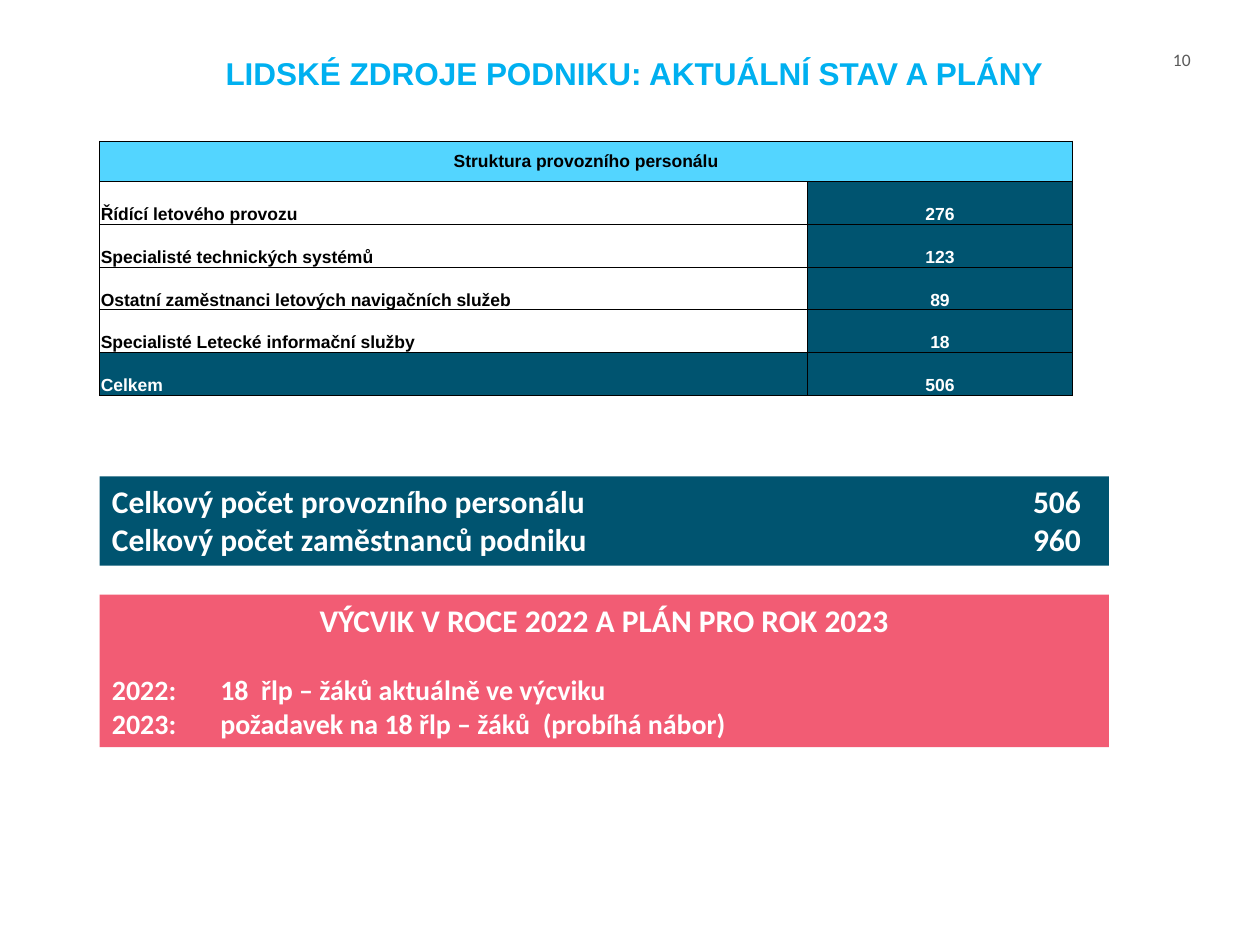
"""Build a slide on staff numbers and training plans."""
from lxml.etree import SubElement as Sub
from pptx import Presentation
from pptx.dml.color import RGBColor
from pptx.enum.shapes import MSO_SHAPE as Shape
from pptx.enum.text import MSO_ANCHOR as Anchor, PP_ALIGN as Align
from pptx.oxml.ns import qn
from pptx.util import Inches, Pt

BLACK = RGBColor(0x00, 0x00, 0x00)
WHITE = RGBColor(0xFF, 0xFF, 0xFF)
GREY = RGBColor(0x5A, 0x5A, 0x5A)
BLUE = RGBColor(0x00, 0xB0, 0xF0)
SKY = RGBColor(0x53, 0xD5, 0xFF)
TEAL = RGBColor(0x00, 0x54, 0x70)
PINK = RGBColor(0xF2, 0x5C, 0x74)

LEFT = 0.79
STAFF = [
    ("Řídící letového provozu", "276"),
    ("Specialisté technických systémů", "123"),
    ("Ostatní zaměstnanci letových navigačních služeb", "89"),
    ("Specialisté Letecké informační služby", "18"),
    ("Celkem", "506"),
]
TOTALS = [
    "Celkový počet provozního personálu\t506",
    "Celkový počet zaměstnanců podniku\t960",
]
HEAD = "VÝCVIK V ROCE 2022 A PLÁN PRO ROK 2023"
PLANS = [
    "2022:\t18  řlp – žáků aktuálně ve výcviku",
    "2023:\tpožadavek na 18 řlp – žáků  (probíhá nábor)",
]


def style(para, size, color, face="Calibri", bold=True, align=Align.LEFT):
    para.alignment = align
    for run in para.runs:
        font = run.font
        font.name, font.size, font.bold = face, Pt(size), bold
        font.color.rgb = color


def add_tab(para, pos, kind):
    tabs = Sub(para._p.get_or_add_pPr(), qn("a:tabLst"))
    Sub(tabs, qn("a:tab"), pos=str(Inches(pos)), algn=kind)


def add_text(slide, box, text):
    frame = slide.shapes.add_textbox(*map(Inches, box)).text_frame
    frame.word_wrap = True
    frame.text = text
    return frame


def add_panel(slide, top, height, fill, lines):
    panel = slide.shapes.add_shape(
        Shape.RECTANGLE, Inches(LEFT), Inches(top), Inches(8.01), Inches(height))
    panel.shadow.inherit = False
    panel.fill.solid()
    panel.fill.fore_color.rgb = fill
    panel.line.fill.background()
    frame = panel.text_frame
    frame.word_wrap = True
    frame.vertical_anchor = Anchor.TOP
    frame.text = "\n".join(lines)
    return frame.paragraphs


def add_edges(cell):
    props = cell._tc.get_or_add_tcPr()
    for side in ("lnL", "lnR", "lnT", "lnB"):
        line = Sub(props, qn(f"a:{side}"), w=str(Pt(0.5)))
        fill = Sub(line, qn("a:solidFill"))
        Sub(fill, qn("a:srgbClr"), val=str(BLACK))


def set_cell(cell, text, fill, color, align, anchor=Anchor.BOTTOM):
    add_edges(cell)
    cell.margin_left = cell.margin_right = cell.margin_top = Inches(0.01)
    cell.margin_bottom = 0
    cell.vertical_anchor = anchor
    if fill is None:
        cell.fill.background()
    else:
        cell.fill.solid()
        cell.fill.fore_color.rgb = fill
    cell.text = text
    style(cell.text_frame.paragraphs[0], 10, color, "Arial", align=align)


def add_staff(slide):
    table = slide.shapes.add_table(
        len(STAFF) + 1, 2, Inches(LEFT), Inches(1.12), Inches(7.72), Inches(2.04)).table
    table.first_row = table.horz_banding = False
    for col, width in zip(table.columns, (5.62, 2.1)):
        col.width = Inches(width)
    for num, row in enumerate(table.rows):
        row.height = Inches(0.34 if num else 0.32)
    table.cell(0, 0).merge(table.cell(0, 1))
    set_cell(table.cell(0, 0), "Struktura provozního personálu", SKY, BLACK,
             Align.CENTER, Anchor.MIDDLE)
    add_edges(table.cell(0, 1))
    for num, (name, count) in enumerate(STAFF, 1):
        last = num == len(STAFF)
        set_cell(table.cell(num, 0), name, TEAL if last else None,
                 WHITE if last else BLACK, Align.LEFT)
        set_cell(table.cell(num, 1), count, TEAL, WHITE, Align.CENTER)


def add_totals(slide):
    for para in add_panel(slide, 3.78, 0.71, TEAL, TOTALS):
        add_tab(para, 7.69, "r")
        style(para, 18, WHITE)


def add_plans(slide):
    head, *plans = add_panel(slide, 4.72, 1.21, PINK, [HEAD, *PLANS])
    style(head, 18, WHITE, align=Align.CENTER)
    plans[0].space_before = Pt(19.5)
    for para in plans:
        add_tab(para, 0.86, "l")
        style(para, 16, WHITE)


def main():
    deck = Presentation()
    deck.slide_width, deck.slide_height = Inches(10), Inches(7.5)
    slide = deck.slides.add_slide(deck.slide_layouts[6])
    page = add_text(slide, (9.31, 0.34, 0.64, 0.27), "10")
    page.margin_left = page.margin_right = 0
    style(page.paragraphs[0], 10, GREY, bold=False)
    title = add_text(slide, (0.64, 0.41, 8.79, 0.62),
                     "LIDSKÉ ZDROJE PODNIKU: AKTUÁLNÍ STAV A PLÁNY").paragraphs[0]
    title.line_spacing = 0.9
    style(title, 18, BLUE, "Arial", align=Align.CENTER)
    add_staff(slide)
    add_totals(slide)
    add_plans(slide)
    deck.save("out.pptx")


if __name__ == "__main__":
    main()
